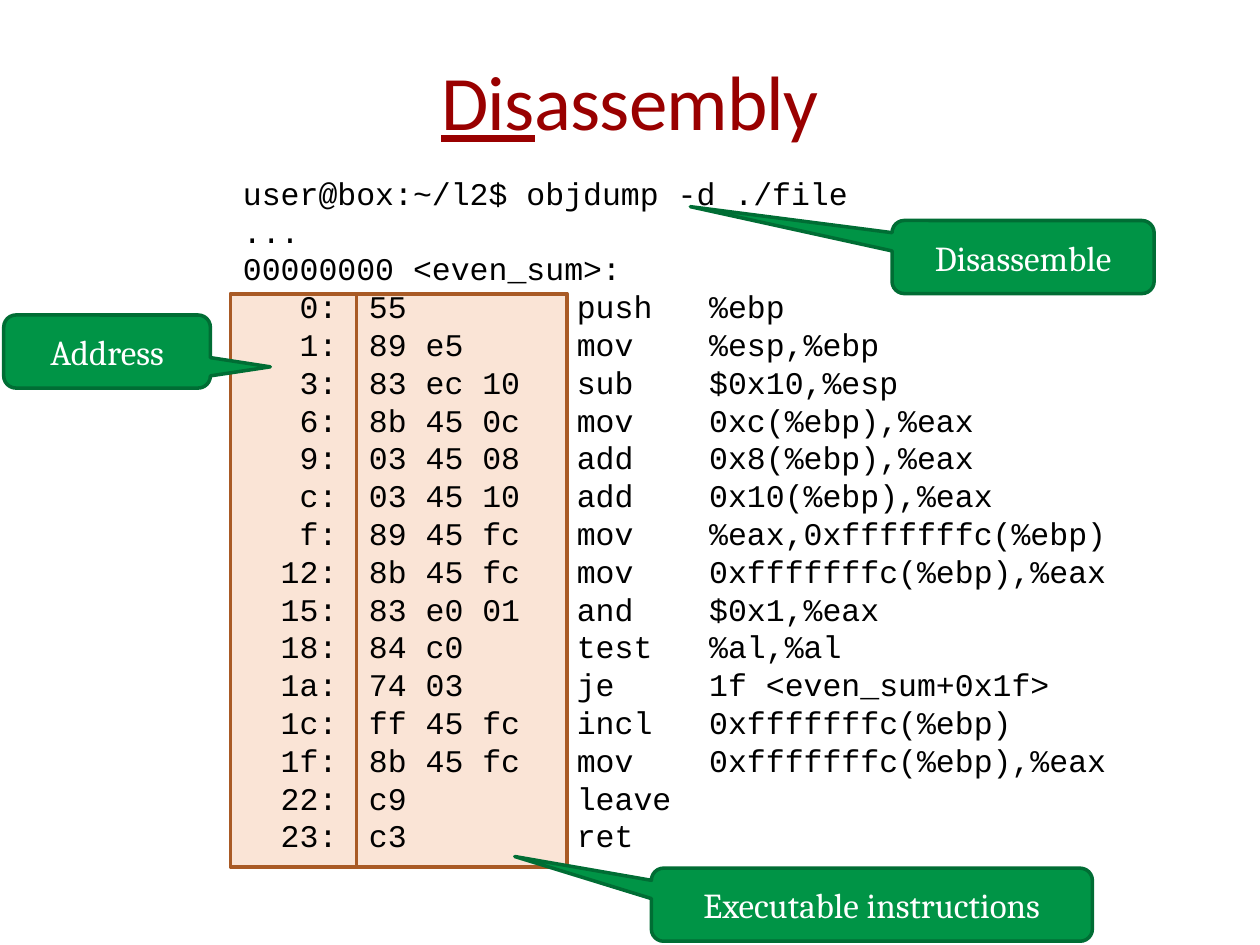
import pptx
import pptx.util
import pptx.dml.color
import pptx.enum.shapes
import pptx.enum.text

Inches, Pt = pptx.util.Inches, pptx.util.Pt
Shape = pptx.enum.shapes.MSO_SHAPE
Align = pptx.enum.text.PP_ALIGN
Anchor = pptx.enum.text.MSO_ANCHOR

HEAD = ["user@box:~/l2$ objdump -d ./file", "...", "00000000 <even_sum>:"]

# Address, machine code, mnemonic, operands
CODE = [
    ("0", "55", "push", "%ebp"),
    ("1", "89 e5", "mov", "%esp,%ebp"),
    ("3", "83 ec 10", "sub", "$0x10,%esp"),
    ("6", "8b 45 0c", "mov", "0xc(%ebp),%eax"),
    ("9", "03 45 08", "add", "0x8(%ebp),%eax"),
    ("c", "03 45 10", "add", "0x10(%ebp),%eax"),
    ("f", "89 45 fc", "mov", "%eax,0xfffffffc(%ebp)"),
    ("12", "8b 45 fc", "mov", "0xfffffffc(%ebp),%eax"),
    ("15", "83 e0 01", "and", "$0x1,%eax"),
    ("18", "84 c0", "test", "%al,%al"),
    ("1a", "74 03", "je", "1f <even_sum+0x1f>"),
    ("1c", "ff 45 fc", "incl", "0xfffffffc(%ebp)"),
    ("1f", "8b 45 fc", "mov", "0xfffffffc(%ebp),%eax"),
    ("22", "c9", "leave", ""),
    ("23", "c3", "ret", ""),
]

# Box, pointer offset from the centre, label
CALLS = [
    ((0.03, 2.5, 1.64, 0.58), (0.79, 0.21), "Address"),
    ((5.17, 6.89, 3.5, 0.58), (-0.81, -0.66), "Executable instructions"),
    ((7.08, 1.75, 2.08, 0.58), (-1.27, -0.69), "Disassemble"),
]


def color(text):
    return pptx.dml.color.RGBColor.from_string(text)


def style(para, name, size, tone):
    para.font.name = name
    para.font.size = Pt(size)
    para.font.color.rgb = color(tone)


def add_box(slide, kind, box, fill, edge, width):
    shape = slide.shapes.add_shape(kind, *map(Inches, box))
    shape.shadow.inherit = False
    shape.fill.solid()
    shape.fill.fore_color.rgb = color(fill)
    shape.line.color.rgb = color(edge)
    shape.line.width = Pt(width)
    return shape


def set_title(slide, box):
    title = slide.shapes.title
    title.left, title.top, title.width, title.height = map(Inches, box)
    frame = title.text_frame
    frame.margin_left = frame.margin_right = 0
    frame.vertical_anchor = Anchor.MIDDLE
    para = frame.paragraphs[0]
    para.alignment = Align.CENTER
    style(para, "Calibri", 44, "990000")
    for text, under in (("Dis", True), ("assembly", False)):
        run = para.add_run()
        run.text = text
        run.font.underline = under
        run._r.get_or_add_rPr().set("spc", "-50")


def add_bands(slide, box, widths):
    left, top, _, height = box
    for width in widths:
        add_box(slide, Shape.RECTANGLE, (left, top, width, height),
                "FAE4D6", "A95A25", 2.25)
        left += width


def add_code(slide, box):
    frame = slide.shapes.add_textbox(*map(Inches, box)).text_frame
    frame.word_wrap = True
    rows = [f"{addr:>4}:\t{code:<11}{name:<7}{args}".rstrip()
            for addr, code, name, args in CODE]
    frame.text = "\n".join(HEAD + rows)
    for para in frame.paragraphs:
        style(para, "Courier New", 18, "000000")


def add_call(slide, box, tip, text):
    shape = add_box(slide, Shape.ROUNDED_RECTANGULAR_CALLOUT, box,
                    "009446", "006D34", 2)
    shape.adjustments[0], shape.adjustments[1] = tip
    frame = shape.text_frame
    frame.vertical_anchor = Anchor.MIDDLE
    frame.text = text
    para = frame.paragraphs[0]
    para.alignment = Align.CENTER
    style(para, "Cambria", 20, "FFFFFF")


def main():
    deck = pptx.Presentation()
    deck.slide_width, deck.slide_height = Inches(10), Inches(7.5)
    slide = deck.slides.add_slide(deck.slide_layouts[5])

    # Highlighted columns behind the listing
    add_bands(slide, (1.83, 2.33, 2.67, 4.55), (1, 1.67))
    # Title and listing
    set_title(slide, (0.5, 0.17, 9, 1.25))
    add_code(slide, (1.83, 1.33, 7.67, 5.55))
    # Callouts
    for box, tip, text in CALLS:
        add_call(slide, box, tip, text)

    deck.save("out.pptx")


if __name__ == "__main__":
    main()
